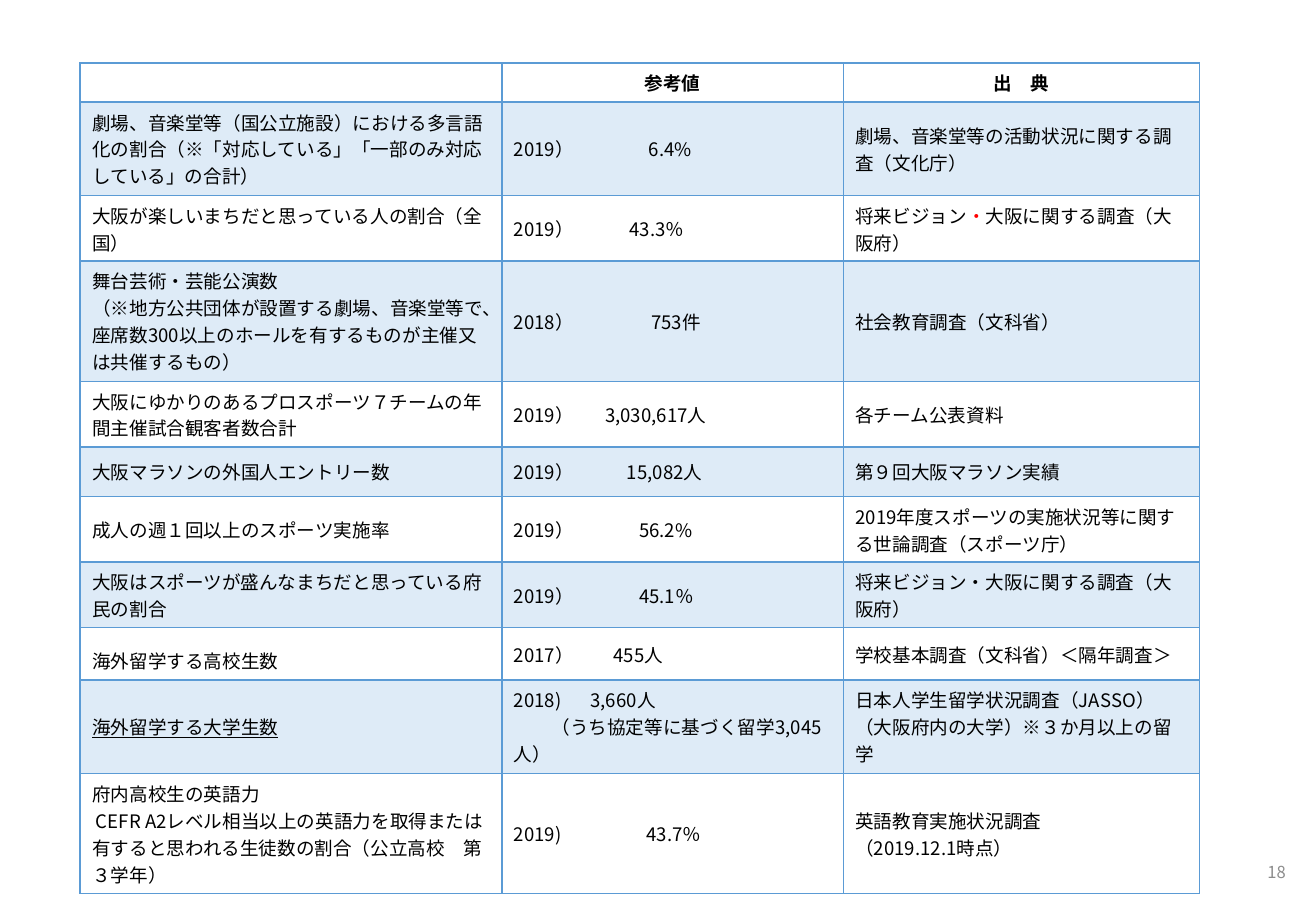
from dataclasses import dataclass

from lxml import etree
from pptx import Presentation
from pptx import util as u
from pptx.dml.color import RGBColor
from pptx.enum import lang, text
from pptx.oxml.ns import qn

FONT = "Noto Sans CJK JP"
BLACK, RED, GREY = "000000", "FF0000", "8C8C8C"
WHITE, BLUE, PALE_BLUE = "FFFFFF", "5B9BD5", "DEEBF7"


@dataclass
class Line:
    """One paragraph: its spans as (words, colour), and its layout in inches."""
    spans: list
    indent: float = 0
    tab: float = 0
    spacing: float = 1
    underline: bool = False


def plain(words, **layout):
    return Line([(words, BLACK)], **layout)


def value(year, amount, tab):
    return plain(f"{year}\t{amount}", tab=tab)


SURVEY_END = "大阪に関する調査（大阪府）"
HEADER = ["", "参考値", "出　典"]
# Row height in inches, then the paragraphs of each of the three columns
ROWS = [
    (0.77,
     [plain("劇場、音楽堂等（国公立施設）における多言語化の割合（※「対応している」「一部のみ対応している」の合計）")],
     [value("2019）", "6.4%", 1.11)],
     [plain("劇場、音楽堂等の活動状況に関する調査（文化庁）")]),
    (0.54,
     [plain("大阪が楽しいまちだと思っている人の割合（全国）")],
     [value("2019）", "43.3％", 0.95)],
     [Line([("将来ビジョン", BLACK), ("・", RED), (SURVEY_END, BLACK)])]),
    (0.99,
     [plain("舞台芸術・芸能公演数"),
      plain("（※地方公共団体が設置する劇場、音楽堂等で、座席数300以上のホールを有するものが主催又は共催するもの）")],
     [value("2018）", "753件", 1.13)],
     [plain("社会教育調査（文科省）")]),
    (0.54,
     [plain("大阪にゆかりのあるプロスポーツ７チームの年間主催試合観客者数合計")],
     [value("2019）", "3,030,617人", 0.75)],
     [plain("各チーム公表資料")]),
    (0.41,
     [plain("大阪マラソンの外国人エントリー数")],
     [value("2019）", "15,082人", 0.93)],
     [plain("第９回大阪マラソン実績")]),
    (0.54,
     [plain("成人の週１回以上のスポーツ実施率")],
     [value("2019）", "56.2%", 1.03)],
     [plain("2019年度スポーツの実施状況等に関する世論調査（スポーツ庁）")]),
    (0.54,
     [plain("大阪はスポーツが盛んなまちだと思っている府民の割合")],
     [value("2019）", "45.1％", 1.03)],
     [plain("将来ビジョン・" + SURVEY_END)]),
    (0.43,
     [plain("海外留学する高校生数", spacing=1.5)],
     [value("2017）", "455人", 0.82)],
     [plain("学校基本調査（文科省）＜隔年調査＞")]),
    (0.77,
     [plain("海外留学する大学生数", underline=True)],
     [value("2018)", "3,660人", 0.63),
      plain("（うち協定等に基づく留学3,045人）", indent=0.31)],
     [plain("日本人学生留学状況調査（JASSO）"),
      plain("（大阪府内の大学）※３か月以上の留学")]),
    (0.99,
     [plain("府内高校生の英語力"),
      plain("CEFR A2レベル相当以上の英語力を取得または有すると思われる生徒数の割合（公立高校　第３学年）",
            indent=0.03)],
     [value("2019)", "43.7％", 1.09)],
     [plain("英語教育実施状況調査"), plain("（2019.12.1時点）")]),
]
COLUMN_WIDTHS = [3.47, 2.81, 2.93]
HEADER_HEIGHT = 0.32
TABLE_LEFT, TABLE_TOP = 0.66, 0.52


def rgb(colour):
    return RGBColor.from_string(colour)


def add_span(para, words, colour, size=11, bold=False, underline=False):
    span = para.add_run()
    span.text = words
    font = span.font
    font.name, font.size, font.bold = FONT, u.Pt(size), bold
    font.underline = underline
    font.color.rgb = rgb(colour)
    font.language_id = lang.MSO_LANGUAGE_ID.JAPANESE
    latin = font._element.find(qn("a:latin"))
    latin.addnext(latin.makeelement(qn("a:ea"), {"typeface": FONT}))


def add_line(para, line):
    properties = para._p.get_or_add_pPr()
    if line.indent:
        properties.set("indent", str(u.Inches(line.indent)))
    if line.spacing != 1:
        para.line_spacing = line.spacing
    if line.tab:
        tabs = etree.SubElement(properties, qn("a:tabLst"))
        etree.SubElement(tabs, qn("a:tab"), pos=str(u.Inches(line.tab)), algn="l")
    for words, colour in line.spans:
        add_span(para, words, colour, underline=line.underline)


def set_borders(cell, top, bottom):
    """Draw all four sides; top and bottom are widths in points."""
    properties = cell._tc.get_or_add_tcPr()
    sides = [("L", 1), ("R", 1), ("T", top), ("B", bottom)]
    for place, (side, width) in enumerate(sides):
        border = properties.makeelement(qn("a:ln" + side), {"w": str(u.Pt(width))})
        fill = etree.SubElement(border, qn("a:solidFill"))
        etree.SubElement(fill, qn("a:srgbClr"), val=BLUE)
        properties.insert(place, border)


def format_cell(cell, fill, top=1, bottom=1):
    cell.vertical_anchor = text.MSO_ANCHOR.MIDDLE
    cell.fill.solid()
    cell.fill.fore_color.rgb = rgb(fill)
    set_borders(cell, top, bottom)


def add_indicator_table(page):
    heights = [HEADER_HEIGHT] + [row[0] for row in ROWS]
    table = page.shapes.add_table(
        len(heights), len(COLUMN_WIDTHS), u.Inches(TABLE_LEFT), u.Inches(TABLE_TOP),
        u.Inches(sum(COLUMN_WIDTHS)), u.Inches(sum(heights))).table
    for column, width in zip(table.columns, COLUMN_WIDTHS):
        column.width = u.Inches(width)
    for row, height in zip(table.rows, heights):
        row.height = u.Inches(height)

    for column, heading in enumerate(HEADER):
        cell = table.cell(0, column)
        format_cell(cell, WHITE, bottom=2)
        para = cell.text_frame.paragraphs[0]
        para.alignment = text.PP_ALIGN.CENTER
        para.font.size = u.Pt(11)
        if heading:
            add_span(para, heading, BLACK, bold=True)

    for number, (_, *cells) in enumerate(ROWS, 1):
        for column, lines in enumerate(cells):
            cell = table.cell(number, column)
            format_cell(cell, PALE_BLUE if number % 2 else WHITE, top=2 if number == 1 else 1)
            frame = cell.text_frame
            for position, line in enumerate(lines):
                add_line(frame.add_paragraph() if position else frame.paragraphs[0], line)


def add_page_number(page, number):
    box = page.shapes.add_textbox(u.Inches(8.7), u.Inches(7.02), u.Inches(1.98), u.Inches(0.32))
    frame = box.text_frame
    frame.word_wrap = True
    frame.vertical_anchor = text.MSO_ANCHOR.MIDDLE
    para = frame.paragraphs[0]
    para.alignment = text.PP_ALIGN.RIGHT
    add_span(para, number, GREY, size=9.8)


def main():
    deck = Presentation()
    deck.slide_width, deck.slide_height = u.Inches(10.83), u.Inches(7.5)
    page = deck.slides.add_slide(deck.slide_layouts[6])
    add_page_number(page, "18")
    add_indicator_table(page)
    deck.save("out.pptx")


if __name__ == "__main__":
    main()
